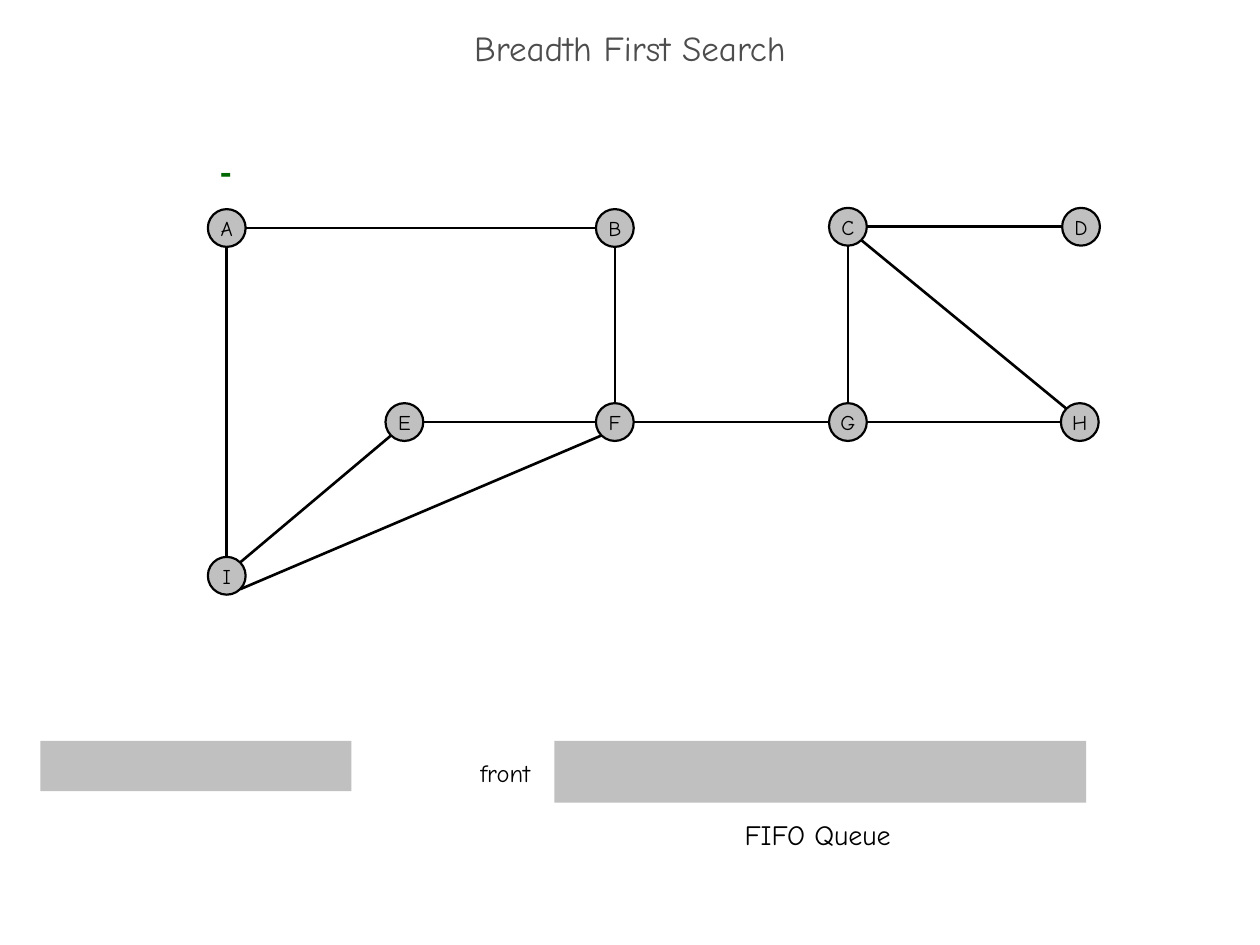
from lxml.etree import SubElement
from pptx import Presentation
from pptx.dml.color import RGBColor
from pptx.enum.shapes import MSO_CONNECTOR, MSO_SHAPE
from pptx.enum.text import MSO_ANCHOR, PP_ALIGN
from pptx.oxml.ns import qn
from pptx.util import Inches, Pt

FONT = "Comic Neue"
TITLE = "Breadth First Search"
RADIUS = 0.15
NODES = {
    "A": (1.8, 1.81), "B": (4.88, 1.81), "C": (6.73, 1.8), "D": (8.58, 1.8),
    "E": (3.21, 3.35), "F": (4.88, 3.35), "G": (6.73, 3.35), "H": (8.57, 3.35),
    "I": (1.8, 4.57),
}
SIDES = {
    "top": (0, -1), "bottom": (0, 1), "left": (-1, 0), "right": (1, 0),
    "top left": (-0.71, -0.71), "top right": (0.71, -0.71),
    "bottom left": (-0.71, 0.71), "bottom right": (0.71, 0.71),
}
EDGES = [
    ("A", "bottom", "I", "top"),
    ("F", "top", "B", "bottom"),
    ("E", "right", "F", "left"),
    ("I", "top right", "E", "bottom left"),
    ("A", "right", "B", "left"),
    ("I", "bottom right", "F", "bottom left"),
    ("C", "bottom right", "H", "top left"),
    ("G", "right", "H", "left"),
    ("C", "bottom", "G", "top"),
    ("C", "right", "D", "left"),
    ("F", "right", "G", "left"),
]
BARS = [(4.4, 5.88, 4.22, 0.49), (0.32, 5.88, 2.47, 0.4)]
LABELS = [
    ("FIFO Queue", (4.4, 6.44, 4.18, 0.37), 16, FONT, "000000", False, PP_ALIGN.CENTER),
    ("-", (1.62, 1.16, 0.37, 0.4), 18, "Courier New", "006600", True, PP_ALIGN.LEFT),
    ("front", (3.6, 5.97, 0.82, 0.33), 14, FONT, "000000", False, PP_ALIGN.CENTER),
]


def color(value):
    return RGBColor.from_string(value)


def write(tf, text, size, font=FONT, ink="000000", bold=False, align=PP_ALIGN.CENTER):
    tf.text = text
    p = tf.paragraphs[0]
    p.alignment = align
    f = p.runs[0].font
    f.name, f.size, f.bold = font, Pt(size), bold
    f.color.rgb = color(ink)
    return p


def add_gray_shape(s, kind, box):
    sp = s.shapes.add_shape(kind, *map(Inches, box))
    sp.shadow.inherit = False
    sp.fill.solid()
    sp.fill.fore_color.rgb = color("C0C0C0")
    sp.line.fill.background()
    return sp


def add_node(s, name, center):
    x, y = center
    sp = add_gray_shape(s, MSO_SHAPE.OVAL, (x - RADIUS, y - RADIUS, 2 * RADIUS, 2 * RADIUS))
    sp.line.color.rgb = color("000000")
    sp.line.width = Pt(1.25)
    sp.text_frame.word_wrap = False
    sp.text_frame.vertical_anchor = MSO_ANCHOR.MIDDLE
    write(sp.text_frame, name, 12)


def node_point(name, side):
    return [Inches(c + RADIUS * d) for c, d in zip(NODES[name], SIDES[side])]


def add_edge(s, start, start_side, end, end_side):
    line = s.shapes.add_connector(
        MSO_CONNECTOR.STRAIGHT, *node_point(start, start_side), *node_point(end, end_side))
    line.line.color.rgb = color("000000")
    line.line.width = Pt(1.5)
    SubElement(line._element.spPr, qn("a:effectLst"))


def main():
    """Build the breadth first search slide."""
    prs = Presentation()
    prs.slide_width, prs.slide_height = Inches(10), Inches(7.5)
    s = prs.slides.add_slide(prs.slide_layouts[5])

    title = s.shapes.title
    title.left, title.top, title.width, title.height = map(Inches, (0, 0.17, 10, 0.5))
    title.text_frame.vertical_anchor = MSO_ANCHOR.MIDDLE
    write(title.text_frame, TITLE, 20, ink="4D4D4D").line_spacing = 0.7

    for name, center in NODES.items():
        add_node(s, name, center)
    for edge in EDGES:
        add_edge(s, *edge)
    for box in BARS:
        add_gray_shape(s, MSO_SHAPE.RECTANGLE, box)
    for text, box, *style in LABELS:
        tf = s.shapes.add_textbox(*map(Inches, box)).text_frame
        tf.word_wrap = True
        write(tf, text, *style)

    prs.save("out.pptx")


if __name__ == "__main__":
    main()
